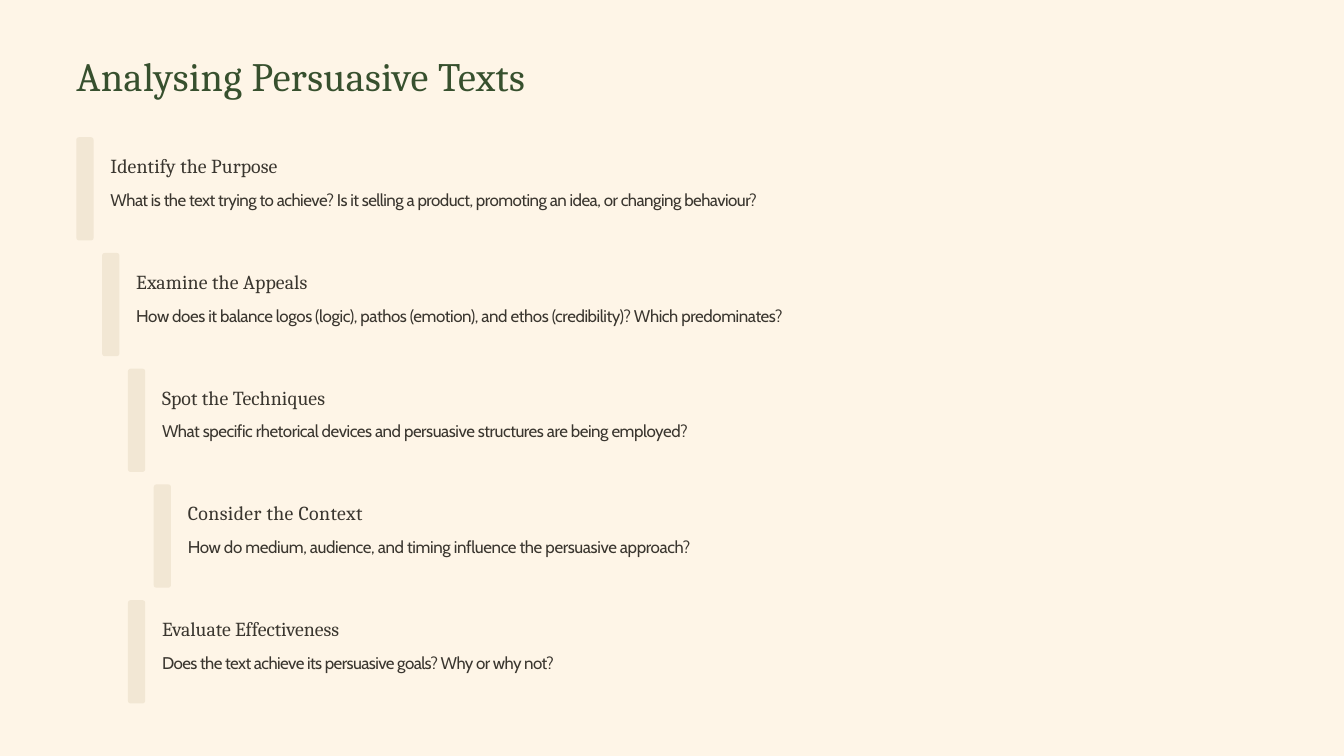
from dataclasses import dataclass

from pptx import Presentation
from pptx.dml.color import RGBColor
from pptx.enum.shapes import MSO_SHAPE
from pptx.enum.text import MSO_ANCHOR, MSO_AUTO_SIZE, PP_ALIGN
from pptx.slide import Slide
from pptx.text.text import TextFrame
from pptx.util import Cm, Pt

CREAM, SAND, GREEN, INK = "FEF5E7", "F2E7D4", "37502E", "3A362F"
LEFT, TOP, INDENT, PITCH = 2.31, 4.15, 0.78, 3.5
BAR_WIDTH, BAR_HEIGHT = 0.52, 3.12


@dataclass
class Step:
    """One question to ask of a text, with its indent level and letter spacing."""
    head: str
    body: str
    level: int
    width: float
    head_gap: float
    body_gap: float


STEPS = [
    Step("Identify the Purpose",
         "What is the text trying to achieve? Is it selling a product, "
         "promoting an idea, or changing behaviour?", 0, 21.11, 0.08, -0.44),
    Step("Examine the Appeals",
         "How does it balance logos (logic), pathos (emotion), and ethos "
         "(credibility)? Which predominates?", 1, 20.8, 0.09, -0.38),
    Step("Spot the Techniques",
         "What specific rhetorical devices and persuasive structures are "
         "being employed?", 2, 16.89, 0.07, -0.41),
    Step("Consider the Context",
         "How do medium, audience, and timing influence the persuasive "
         "approach?", 3, 15.95, 0.3, -0.33),
    Step("Evaluate Effectiveness",
         "Does the text achieve its persuasive goals? Why or why not?",
         2, 12.62, -0.06, -0.5),
]


def color(code: str) -> RGBColor:
    """Turn a hex string into a colour."""
    return RGBColor.from_string(code)


def setup(frame: TextFrame, left: float, top: float) -> None:
    """Set the margins, wrapping and anchor of a text frame."""
    frame.word_wrap = True
    frame.auto_size = MSO_AUTO_SIZE.NONE
    frame.vertical_anchor = MSO_ANCHOR.TOP
    frame.margin_left, frame.margin_top = Cm(left), Cm(top)
    frame.margin_right = frame.margin_bottom = 0


def write(frame: TextFrame, text: str, *, font: str, size: float,
          ink: str = INK, before: float = 1, gap: float = 0) -> None:
    """Add a paragraph, filling the first one if it is still empty."""
    last = frame.paragraphs[-1]
    line = frame.add_paragraph() if last.runs else last
    line.alignment = PP_ALIGN.LEFT
    line.space_before = Pt(before)
    run = line.add_run()
    run.text = text
    run.font.name, run.font.size = font, Pt(size)
    run.font.color.rgb = color(ink)
    run._r.get_or_add_rPr().set("spc", str(round(gap * 100)))


def draw_title(slide: Slide) -> None:
    """Place and format the title."""
    title = slide.shapes.title
    title.left, title.top = Cm(1.8), Cm(1.09)
    title.width, title.height = Cm(24.59), Cm(3.43)
    setup(title.text_frame, 0.51, 0.46)
    write(title.text_frame, "Analysing Persuasive Texts",
          font="Cambria", size=34.5, ink=GREEN, gap=0.39)


def draw_step(slide: Slide, step: Step, row: int) -> None:
    """Draw the bar and the text of one step."""
    left, top = LEFT + step.level * INDENT, TOP + row * PITCH
    bar = slide.shapes.add_shape(MSO_SHAPE.ROUNDED_RECTANGLE, Cm(left), Cm(top),
                                 Cm(BAR_WIDTH), Cm(BAR_HEIGHT))
    bar.adjustments[0] = 0.15
    bar.shadow.inherit = False
    bar.fill.solid()
    bar.fill.fore_color.rgb = color(SAND)
    bar.line.fill.background()
    box = slide.shapes.add_textbox(Cm(left + 1), Cm(top + 0.47),
                                   Cm(step.width), Cm(1.78))
    setup(box.text_frame, 0.03, 0.03)
    write(box.text_frame, step.head, font="Cambria", size=17, gap=step.head_gap)
    write(box.text_frame, step.body, font="Cabin", size=14.5, before=10.3,
          gap=step.body_gap)


def main() -> None:
    """Build the slide and save it."""
    deck = Presentation()
    deck.slide_width, deck.slide_height = Cm(40.64), Cm(22.86)
    slide = deck.slides.add_slide(deck.slide_layouts[5])
    slide.background.fill.solid()
    slide.background.fill.fore_color.rgb = color(CREAM)
    draw_title(slide)
    for row, step in enumerate(STEPS):
        draw_step(slide, step, row)
    deck.save("out.pptx")


if __name__ == "__main__":
    main()
